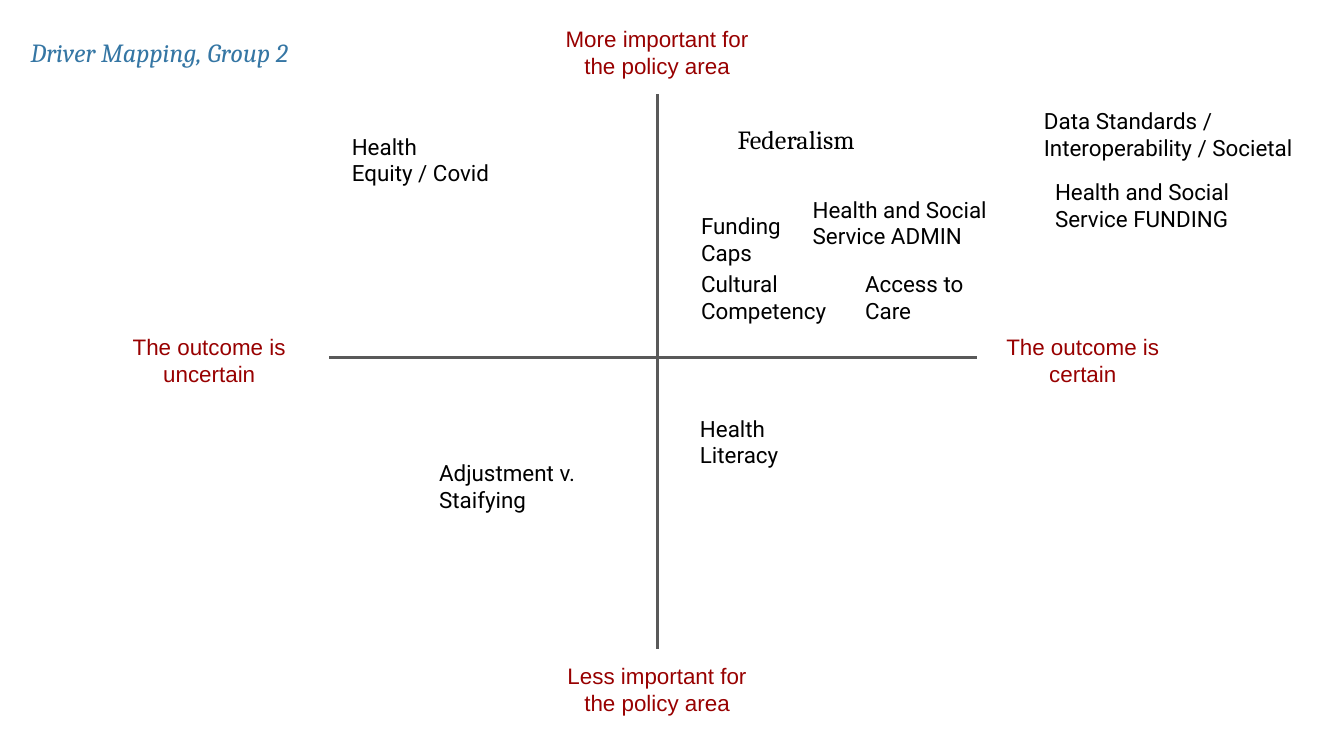
from pptx import Presentation
from pptx.dml.color import RGBColor
from pptx.enum.shapes import MSO_CONNECTOR
from pptx.enum.text import MSO_ANCHOR, PP_ALIGN
from pptx.util import Cm, Pt
from lxml.etree import SubElement
from pptx.oxml.ns import qn

# Content, lengths in cm
COLORS = {"title": "3576A4", "axis": "595959", "label": "980000", "driver": "000000"}
TITLE = "Driver Mapping, Group 2"
AXIS_X, AXIS_Y = 12.42, 6.76
LEFT, RIGHT, TOP, BOTTOM = 6.22, 18.47, 1.78, 12.27
LABEL_W, LABEL_H = 3.99, 1.55
LABEL_GAP = 0.27
DRIVER_H = 1.07
NARROW, MEDIUM, WIDE = 3.1, 4.37, 6.22

# Text, left, top, width
DRIVERS = [
    ("Health Equity / Covid", 6.4, 2.26, NARROW),
    ("Adjustment v. Staifying", 8.05, 8.43, NARROW),
    ("Health Literacy", 12.98, 7.59, NARROW),
    ("Cultural Competency", 13, 4.85, MEDIUM),
    ("Access to Care", 16.1, 4.85, NARROW),
    ("Data Standards / Interoperability / Societal", 19.48, 1.78, WIDE),
    ("Health and Social Service FUNDING", 19.69, 3.12, MEDIUM),
    ("Health and Social Service ADMIN", 15.11, 3.45, MEDIUM),
    ("Funding Caps", 13, 3.76, 2.11),
]

prs = Presentation()
prs.slide_width, prs.slide_height = Cm(25.4), Cm(14.29)
s = prs.slides.add_slide(prs.slide_layouts[6])


def add_text(text, x, y, w, h, color, font="Roboto", size=12, italic=False,
             align=PP_ALIGN.LEFT, anchor=MSO_ANCHOR.TOP):
    tf = s.shapes.add_textbox(Cm(x), Cm(y), Cm(w), Cm(h)).text_frame
    tf.word_wrap = True
    tf.vertical_anchor = anchor
    tf.margin_left = tf.margin_right = tf.margin_top = tf.margin_bottom = Cm(0.25)
    p = tf.paragraphs[0]
    p.alignment = align
    r = p.add_run()
    r.text = text
    r.font.name, r.font.size, r.font.italic = font, Pt(size), italic
    r.font.color.rgb = RGBColor.from_string(COLORS[color])


def add_axis(x1, y1, x2, y2):
    line = s.shapes.add_connector(MSO_CONNECTOR.STRAIGHT, Cm(x1), Cm(y1), Cm(x2), Cm(y2))
    line.line.color.rgb = RGBColor.from_string(COLORS["axis"])
    line.line.width = Pt(1.5)
    SubElement(line._element.spPr, qn("a:effectLst"))


# Title
add_text(TITLE, 0.33, 0.15, 16.66, 1.68, "title", "Cambria", 14, True,
         anchor=MSO_ANCHOR.MIDDLE)

# Axes
add_axis(AXIS_X, TOP, AXIS_X, BOTTOM)
add_axis(LEFT, AXIS_Y, RIGHT, AXIS_Y)

# Labels at the axis ends
label_x = AXIS_X - LABEL_W / 2
label_y = AXIS_Y - LABEL_H / 2 + 0.06
for text, x, y in [
    ("The outcome is uncertain", LEFT - LABEL_GAP - LABEL_W, label_y),
    ("The outcome is certain", RIGHT, label_y),
    ("More important for the policy area", label_x, TOP - LABEL_H),
    ("Less important for the policy area", label_x, BOTTOM),
]:
    add_text(text, x, y, LABEL_W, LABEL_H, "label", "Arial", align=PP_ALIGN.CENTER)

# Drivers
for text, x, y, w in DRIVERS:
    add_text(text, x, y, w, DRIVER_H, "driver")
add_text("Federalism", 13.69, 2.08, NARROW, DRIVER_H, "driver", "Cambria", 14)

prs.save("out.pptx")
